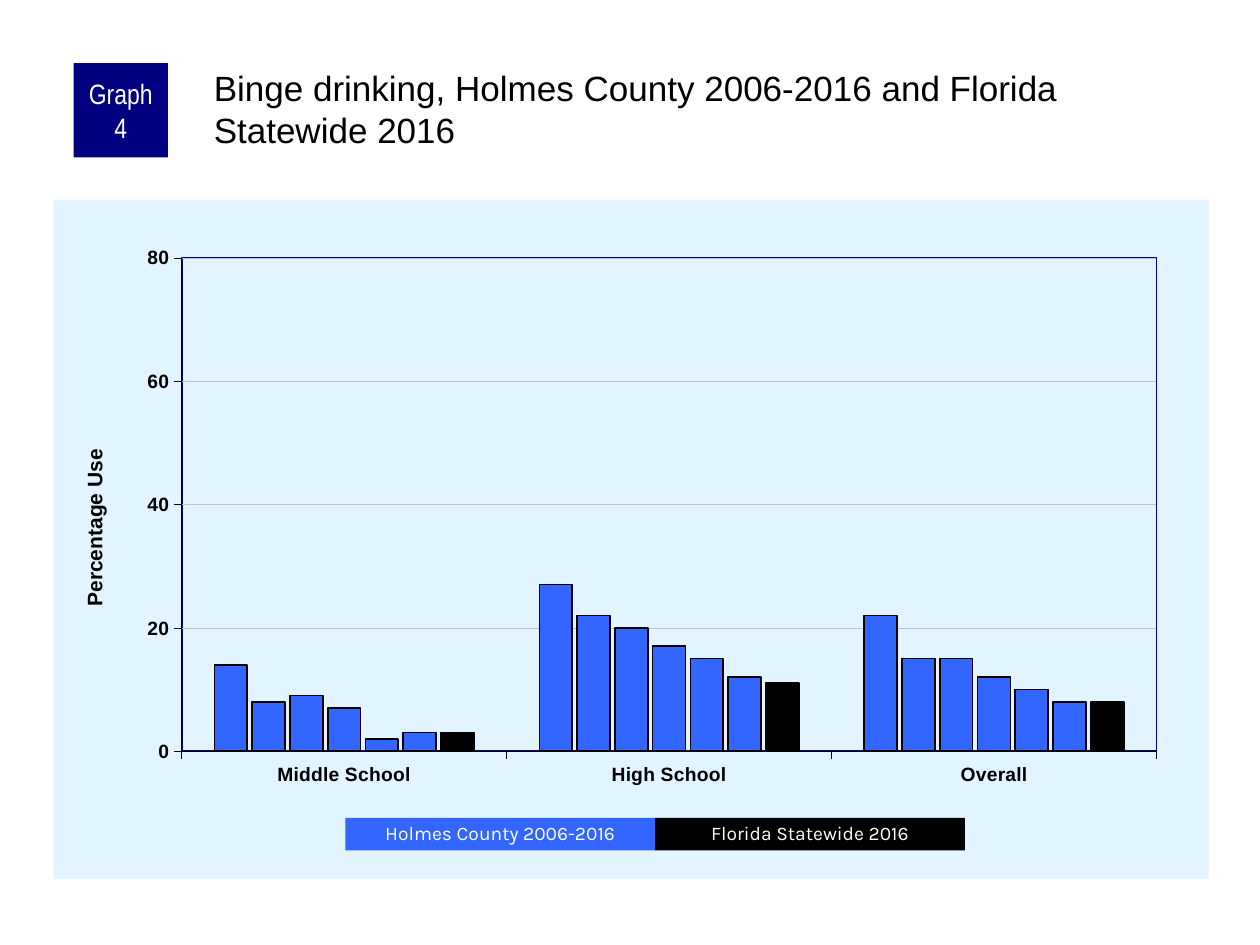
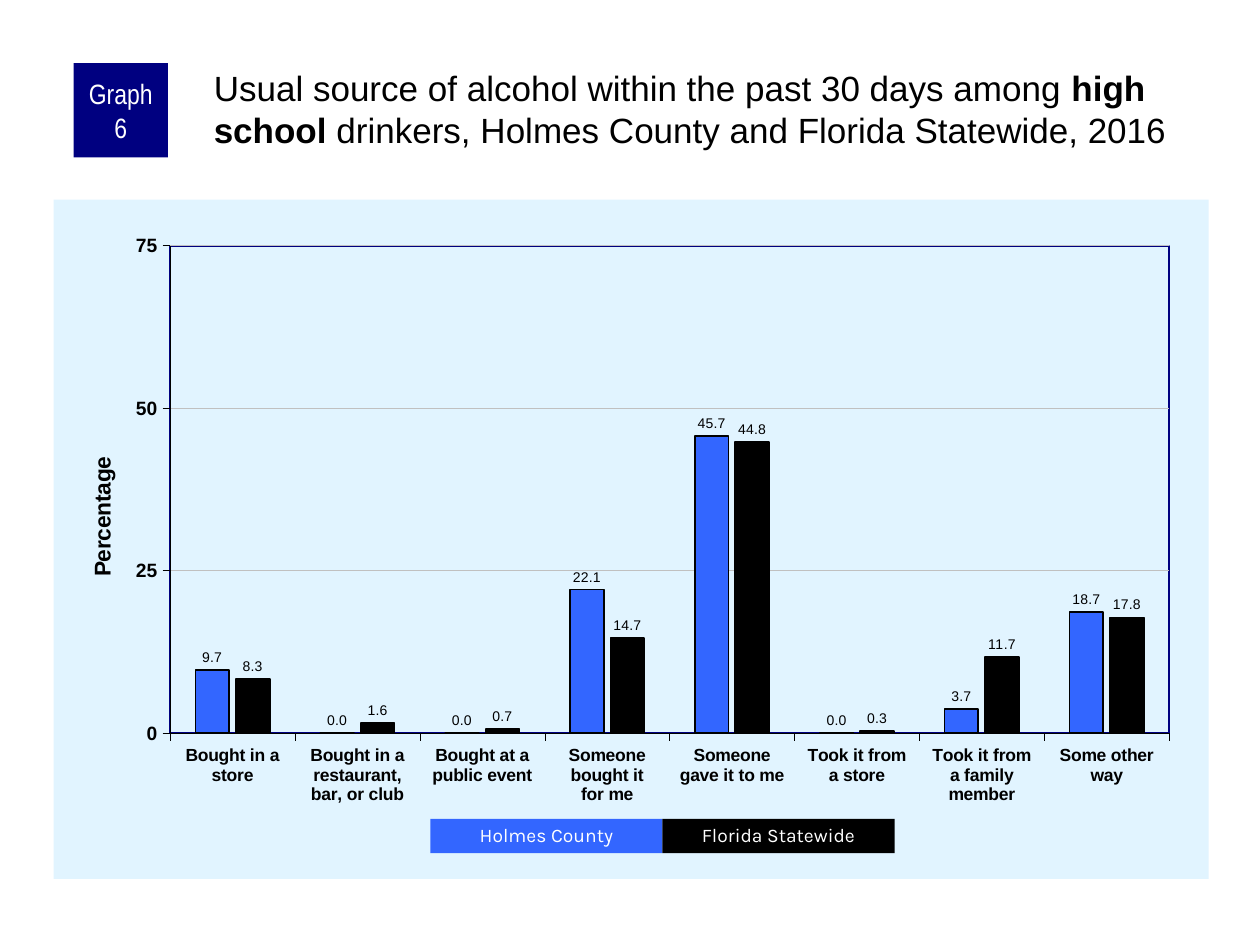
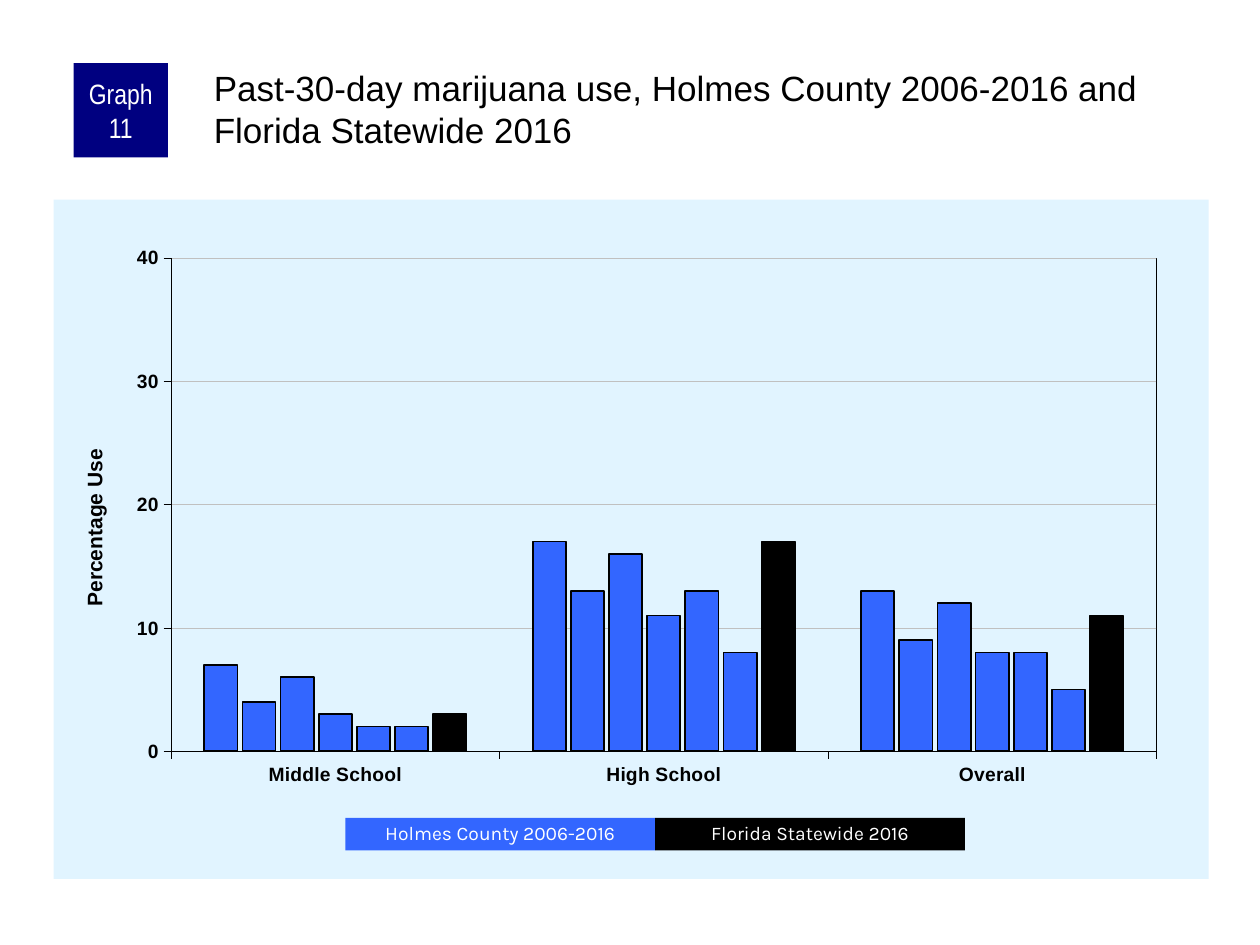
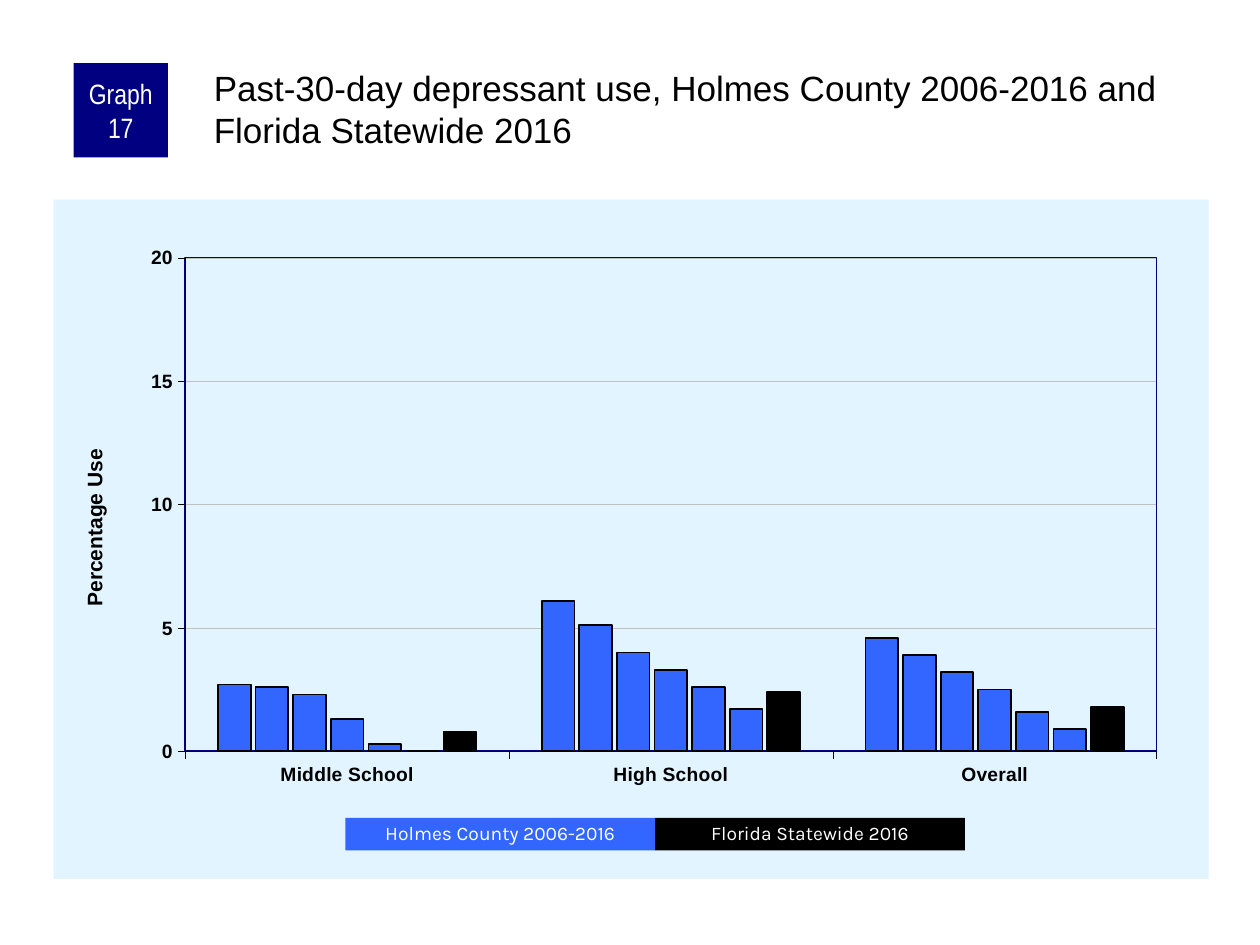
from dataclasses import dataclass
from typing import NamedTuple

from pptx import Presentation
from pptx.chart.data import CategoryChartData
from pptx.dml.color import RGBColor
from pptx.enum.chart import XL_CHART_TYPE, XL_LABEL_POSITION
from pptx.enum.shapes import MSO_SHAPE
from pptx.enum.text import MSO_ANCHOR, MSO_AUTO_SIZE, PP_ALIGN
from pptx.oxml import parse_xml
from pptx.oxml.ns import nsdecls, qn
from pptx.util import Inches, Pt

CELL = Inches(1) // 12
COLS, ROWS = 120, 90
NAVY = RGBColor(0x00, 0x00, 0x80)
BLUE = RGBColor(0x33, 0x66, 0xFF)
PALE = RGBColor(0xE1, 0xF4, 0xFF)
GREY = RGBColor(0xC0, 0xC0, 0xC0)
BLACK = RGBColor(0, 0, 0)
WHITE = RGBColor(0xFF, 0xFF, 0xFF)


class Box(NamedTuple):
    """A place on the grid: left, top, width and height in cells."""
    x: float
    y: float
    w: float
    h: float


BADGE = Box(7, 6, 9, 9)
HEAD = Box(20, 6, 95, 10)
PANEL = Box(5.1, 19, 110, 64.7)


@dataclass
class Graph:
    """One chart slide."""
    num: int
    title: str
    top: int
    step: int
    rows: list
    plot: Box
    cats: tuple = ("Middle School", "High School", "Overall")
    keys: tuple = ("Holmes County 2006-2016", "Florida Statewide 2016")
    key: Box = Box(32.9, 77.9, 29.5, 3.1)
    axis: str = "Percentage Use"
    spot: tuple = (2.3, 23.4)
    axis_pt: float = 12
    cat_pt: float = 11
    gap: int = 200
    lap: int = -15
    edge: RGBColor = NAVY
    edge_pt: float = 1
    tags: bool = False


GRAPHS = [
    Graph(4, "Binge drinking, Holmes County 2006-2016 and Florida Statewide 2016", 80, 20,
          [(14, 27, 22), (8, 22, 15), (9, 20, 15), (7, 17, 12), (2, 15, 10), (3, 12, 8), (3, 11, 8)],
          Box(12.2, 5.55, 92.85, 47)),
    Graph(6, "Usual source of alcohol within the past 30 days among *high school* drinkers, "
          "Holmes County and Florida Statewide, 2016", 75, 25,
          [(9.7, 0, 0, 22.1, 45.7, 0, 3.7, 18.7), (8.3, 1.6, 0.7, 14.7, 44.8, 0.3, 11.7, 17.8)],
          Box(11.1, 4.4, 95.15, 46.45),
          cats=("Bought in a store", "Bought in a restaurant, bar, or club", "Bought at a public event",
                "Someone bought it\nfor me", "Someone\ngave it to me", "Took it from\na store",
                "Took it from\na family member", "Some other way"),
          keys=("Holmes County", "Florida Statewide"), key=Box(41, 78, 22.1, 3.25),
          axis="Percentage", spot=(2.9, 24.1), axis_pt=13, cat_pt=10, gap=150, lap=-20, tags=True),
    Graph(11, "Past-30-day marijuana use, Holmes County 2006-2016 and Florida Statewide 2016", 40, 10,
          [(7, 17, 13), (4, 13, 9), (6, 16, 12), (3, 11, 8), (2, 13, 8), (2, 8, 5), (3, 17, 11)],
          Box(11.2, 5.55, 93.85, 47), edge=BLACK, edge_pt=0.25),
    Graph(17, "Past-30-day depressant use, Holmes County 2006-2016 and Florida Statewide 2016", 20, 5,
          [(2.7, 6.1, 4.6), (2.6, 5.1, 3.9), (2.3, 4, 3.2), (1.3, 3.3, 2.5), (0.3, 2.6, 1.6),
           (0, 1.7, 0.9), (0.8, 2.4, 1.8)],
          Box(12.55, 5.55, 92.5, 47)),
]


def place(box: Box) -> list:
    """Turn grid cells into slide lengths."""
    return [round(n * CELL) for n in box]


def style(font, size: float, color=BLACK, name: str = "Arial", bold: bool = False) -> None:
    """Set the look of a font."""
    font.size, font.name, font.bold = Pt(size), name, bold
    font.color.rgb = color


def stroke(line, color, width: float) -> None:
    """Set the colour and width of a line."""
    line.color.rgb, line.width = color, Pt(width)


def write(frame, text: str, *, size: float, color=BLACK, name: str = "Arial", align=PP_ALIGN.CENTER,
          anchor=MSO_ANCHOR.MIDDLE, pads=(0.1, 0.05, 0.1, 0.05), lead: float = 1.0) -> None:
    """Fill a frame with text, where stars enclose bold words."""
    frame.word_wrap, frame.auto_size = True, MSO_AUTO_SIZE.NONE
    frame.vertical_anchor = anchor
    frame.margin_left, frame.margin_top, frame.margin_right, frame.margin_bottom = map(Inches, pads)
    para = frame.paragraphs[0]
    para.alignment, para.line_spacing = align, lead
    for i, part in enumerate(text.split("*")):
        run = para.add_run()
        run.text = part
        style(run.font, size, color, name, i % 2 == 1)


def block(slide, box: Box, fill, text: str, **look) -> None:
    """Draw a plain rectangle with white text."""
    shape = slide.shapes.add_shape(MSO_SHAPE.RECTANGLE, *place(box))
    shape.shadow.inherit = False
    shape.fill.solid()
    shape.fill.fore_color.rgb = fill
    shape.line.fill.background()
    write(shape.text_frame, text, color=WHITE, **look)


def settle(node, marks: dict, inner: bool = False) -> None:
    """Give a chart part a fixed place, in shares of the chart."""
    old = node.find(qn("c:layout"))
    spot = 0 if old is None else node.index(old)
    if old is not None:
        node.remove(old)
    body = '<c:layoutTarget val="inner"/>' if inner else ""
    body += '<c:xMode val="edge"/><c:yMode val="edge"/>'
    body += "".join(f'<c:{k} val="{v:.4f}"/>' for k, v in marks.items())
    node.insert(spot, parse_xml(
        f'<c:layout {nsdecls("c")}><c:manualLayout>{body}</c:manualLayout></c:layout>'))


def paint(chart, color) -> None:
    """Fill the chart area."""
    area = parse_xml(f'<c:spPr {nsdecls("c", "a")}><a:solidFill><a:srgbClr val="{color}"/></a:solidFill>'
                     '<a:ln><a:noFill/></a:ln></c:spPr>')
    chart._chartSpace.find(qn("c:chart")).addnext(area)


def frame_plot(chart, graph: Graph) -> None:
    """Place and outline the plot."""
    plot = chart._chartSpace.find(qn("c:chart")).find(qn("c:plotArea"))
    x, y, w, h = graph.plot
    settle(plot, dict(x=x / PANEL.w, y=y / PANEL.h, w=w / PANEL.w, h=h / PANEL.h), True)
    plot.append(parse_xml(
        f'<c:spPr {nsdecls("c", "a")}><a:noFill/><a:ln w="{Pt(graph.edge_pt)}"><a:solidFill>'
        f'<a:srgbClr val="{graph.edge}"/></a:solidFill></a:ln></c:spPr>'))


def set_axes(chart, graph: Graph) -> None:
    """Format both axes, the grid and the axis title."""
    cat, val = chart.category_axis, chart.value_axis
    for axis, size in ((cat, graph.cat_pt), (val, 11)):
        style(axis.tick_labels.font, size, bold=True)
        stroke(axis.format.line, BLACK, 0.25)
    val.minimum_scale, val.maximum_scale, val.major_unit = 0, graph.top, graph.step
    stroke(val.major_gridlines.format.line, GREY, 0.25)
    title = val.axis_title
    run = title.text_frame.paragraphs[0].add_run()
    run.text = graph.axis
    style(run.font, graph.axis_pt, bold=True)
    x, y = graph.spot
    settle(title._element, dict(x=x / PANEL.w, y=y / PANEL.h))


def set_bars(chart, graph: Graph) -> None:
    """Colour the bars and label them if asked."""
    plot = chart.plots[0]
    plot.gap_width, plot.overlap, plot.vary_by_categories = graph.gap, graph.lap, False
    for i, bar in enumerate(plot.series, 1):
        bar.format.fill.solid()
        bar.format.fill.fore_color.rgb = BLACK if i == len(graph.rows) else BLUE
        stroke(bar.format.line, BLACK, 1)
        if graph.tags:
            tags = bar.data_labels
            tags.show_value, tags.position = True, XL_LABEL_POSITION.OUTSIDE_END
            tags.number_format, tags.number_format_is_linked = "0.0", False
            style(tags.font, 8)


def add_bars(slide, graph: Graph) -> None:
    """Draw the column chart."""
    data = CategoryChartData()
    data.categories = graph.cats
    for i, row in enumerate(graph.rows, 1):
        data.add_series(f"Series {i}", row)
    chart = slide.shapes.add_chart(XL_CHART_TYPE.COLUMN_CLUSTERED, *place(PANEL), data).chart
    chart.has_legend = chart.has_title = False
    style(chart.font, 8)
    paint(chart, PALE)
    set_axes(chart, graph)
    set_bars(chart, graph)
    frame_plot(chart, graph)


def add_page(deck, graph: Graph) -> None:
    """Build one slide with badge, title, chart and key."""
    slide = deck.slides.add_slide(deck.slide_layouts[5])
    add_bars(slide, graph)
    block(slide, BADGE, NAVY, f"Graph {graph.num}", size=16, name="Arial Narrow", pads=(0.05, 0, 0.05, 0))
    head = slide.shapes.title
    head.left, head.top, head.width, head.height = place(HEAD)
    write(head.text_frame, graph.title, size=20, align=PP_ALIGN.LEFT, anchor=MSO_ANCHOR.TOP,
          pads=(0.03, 0.03, 0, 0))
    for i, (text, fill) in enumerate(zip(graph.keys, (BLUE, BLACK))):
        box = graph.key._replace(x=graph.key.x + i * graph.key.w)
        block(slide, box, fill, text, size=11, name="Karla", lead=0.9)


def main() -> None:
    """Build and save the deck."""
    deck = Presentation()
    deck.slide_width, deck.slide_height = COLS * CELL, ROWS * CELL
    for graph in GRAPHS:
        add_page(deck, graph)
    deck.save("out.pptx")


if __name__ == "__main__":
    main()
